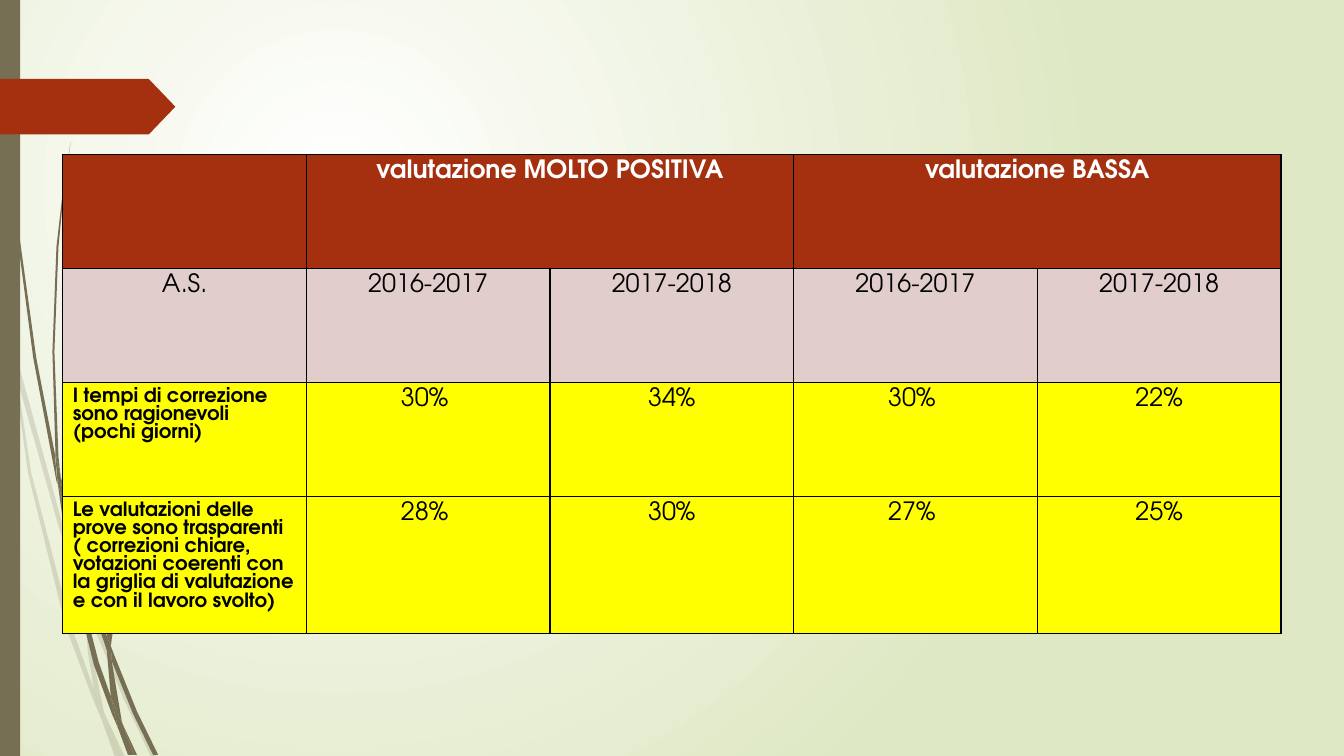
from lxml.etree import SubElement
from pptx import Presentation
from pptx.dml.color import RGBColor
from pptx.enum.shapes import MSO_SHAPE
from pptx.enum.text import PP_ALIGN
from pptx.oxml import parse_xml
from pptx.oxml.ns import nsdecls, qn
from pptx.util import Cm, Pt

WHITE = RGBColor(0xFF, 0xFF, 0xFF)
BLACK = RGBColor(0x00, 0x00, 0x00)
PALE_GREEN = RGBColor(0xDF, 0xE8, 0xC4)
OLIVE = RGBColor(0x76, 0x6F, 0x54)
RUST = RGBColor(0xA5, 0x30, 0x10)
ROSE = RGBColor(0xE1, 0xCD, 0xCC)
YELLOW = RGBColor(0xFF, 0xFF, 0x00)

WISP_UNIT = Cm(0.0254)

PALE_WISPS = [
    [(11, 350), (9, 322), (0, 282), (0, 299), (10, 344)],
    [(17, 376), (58, 522), (84, 599), (85, 586), (62, 520), (14, 345)],
    [(88, 610), (123, 694), (150, 751), (155, 751), (127, 692), (92, 607), (88, 596)],
    [(119, 751), (124, 751), (105, 711)],
    [(11, 350), (28, 470), (65, 621), (92, 693), (101, 714),
     (99, 707), (93, 683), (70, 619), (31, 469), (17, 376)],
    [(84, 599), (87, 646), (93, 683), (96, 692), (105, 711),
     (103, 706), (91, 646), (88, 610), (88, 608)],
    [(88, 596), (88, 584), (110, 462), (160, 349), (229, 245), (268, 198), (290, 175), (312, 154),
     (312, 153), (289, 175), (268, 197), (228, 244), (158, 348), (107, 461), (85, 584), (85, 586)],
    [(101, 714), (114, 751), (119, 751)],
    [(88, 608), (88, 596), (85, 586), (84, 599)],
    [(93, 683), (99, 707), (101, 714), (119, 751), (105, 711), (96, 692)],
]
DARK_WISPS = [
    [(3, 0), (4, 48), (7, 110), (17, 233), (33, 355), (56, 477), (57, 481),
     (55, 457), (55, 453), (36, 355), (19, 232), (8, 109), (5, 48), (4, 0)],
    [(60, 472), (64, 505), (88, 592), (106, 645), (106, 633), (106, 631), (93, 590)],
    [(110, 641), (111, 656), (132, 708), (152, 749), (157, 749), (136, 706), (113, 649)],
    [(57, 477), (68, 557), (93, 659), (111, 708), (117, 722),
     (116, 717), (110, 691), (98, 657), (72, 556), (64, 505)],
    [(70, 141), (62, 193), (56, 245), (52, 349), (55, 449), (60, 472),
     (58, 453), (54, 349), (58, 245), (63, 193)],
    [(122, 719), (133, 749), (136, 749)],
    [(55, 449), (55, 453), (57, 477), (64, 505), (60, 472)],
    [(110, 641), (111, 633), (125, 552), (158, 476), (205, 406), (231, 374), (245, 359), (261, 344),
     (260, 344), (245, 358), (231, 373), (204, 405), (156, 474), (122, 551), (106, 631)],
    [(117, 722), (127, 749), (131, 749)],
    [(106, 645), (110, 691), (116, 706), (122, 719), (121, 716), (111, 656), (109, 651)],
    [(106, 631), (106, 645), (109, 651), (111, 656), (110, 641)],
    [(110, 691), (116, 717), (117, 722), (130, 749), (133, 749), (122, 719), (116, 706)],
]

YEARS = ["2016-2017", "2017-2018"]
ROWS = [
    (RUST, ["", "valutazione MOLTO POSITIVA", "", "valutazione BASSA", ""]),
    (ROSE, ["A.S."] + YEARS * 2),
    (YELLOW, ["I tempi di correzione sono ragionevoli (pochi giorni)",
              "30% ", "34%", "30% ", "22%"]),
    (YELLOW, ["Le valutazioni delle prove sono trasparenti ( correzioni chiare, "
              "votazioni coerenti con la griglia di valutazione e con il lavoro svolto)",
              "28% ", "30%", "27% ", "25%"]),
]
ROW_HEIGHTS = [2.87, 2.87, 2.87, 3.45]
COLUMN_WIDTH = 6.14


class SlideBuilder:
    font_name = "TeX Gyre Adventor"
    line_pitch = 0.93

    def __init__(self, slide):
        self.slide = slide

    def background(self, centre_color, edge_color):
        fill = self.slide.background.fill
        fill.gradient()
        for stop, position, color in zip(fill.gradient_stops, (0, 1), (centre_color, edge_color)):
            stop.position = position
            stop.color.rgb = color
        gradient = next(self.slide.element.iter(qn("a:gradFill")))
        gradient.replace(gradient.find(qn("a:lin")), parse_xml(
            f'<a:path {nsdecls("a")} path="circle">'
            '<a:fillToRect l="50000" t="50000" r="100000" b="100000"/></a:path>'))

    def paint(self, shape, color):
        shape.shadow.inherit = False
        shape.fill.solid()
        shape.fill.fore_color.rgb = color
        shape.line.fill.background()

    def block(self, kind, left, top, width, height, color):
        shape = self.slide.shapes.add_shape(kind, Cm(left), Cm(top), Cm(width), Cm(height))
        self.paint(shape, color)
        return shape

    def wisp(self, outline, color, opacity=100):
        builder = self.slide.shapes.build_freeform(*outline[0], scale=WISP_UNIT)
        builder.add_line_segments(outline[1:], close=True)
        shape = builder.convert_to_shape()
        self.paint(shape, color)
        if opacity < 100:
            color_element = next(shape.element.spPr.iter(qn("a:srgbClr")))
            SubElement(color_element, qn("a:alpha")).set("val", str(opacity * 1000))

    def cell_borders(self, cell, color):
        properties = cell._tc.get_or_add_tcPr()
        for position, side in enumerate(("lnL", "lnR", "lnT", "lnB")):
            properties.insert(position, parse_xml(
                f'<a:{side} {nsdecls("a")} w="12700"><a:solidFill>'
                f'<a:srgbClr val="{color}"/></a:solidFill></a:{side}>'))

    def cell(self, cell, text, fill_color, text_color, size, bold, alignment):
        cell.fill.solid()
        cell.fill.fore_color.rgb = fill_color
        self.cell_borders(cell, BLACK)
        paragraph = cell.text_frame.paragraphs[0]
        paragraph.text = text
        paragraph.alignment = alignment
        paragraph.line_spacing = Pt(size * self.line_pitch)
        font = paragraph.font
        font.name = self.font_name
        font.size = Pt(size)
        font.bold = bold
        font.color.rgb = text_color

    def table(self, left, top, rows, row_heights, column_width):
        column_count = len(rows[0][1])
        table = self.slide.shapes.add_table(
            len(rows), column_count, Cm(left), Cm(top),
            Cm(column_width * column_count), Cm(sum(row_heights))).table
        for column in table.columns:
            column.width = Cm(column_width)
        for row_index, (fill_color, texts) in enumerate(rows):
            table.rows[row_index].height = Cm(row_heights[row_index])
            header = row_index == 0
            for column_index, text in enumerate(texts):
                question = row_index > 1 and column_index == 0
                self.cell(table.cell(row_index, column_index), text, fill_color,
                          WHITE if header else BLACK, 14 if question else 18,
                          header or question, PP_ALIGN.LEFT if question else PP_ALIGN.CENTER)
        for first in range(1, column_count, 2):
            table.cell(0, first).merge(table.cell(0, first + 1))


def main():
    presentation = Presentation()
    presentation.slide_width = Cm(33.87)
    presentation.slide_height = Cm(19.05)
    builder = SlideBuilder(presentation.slides.add_slide(presentation.slide_layouts[6]))
    builder.background(WHITE, PALE_GREEN)
    for outline in PALE_WISPS:
        builder.wisp(outline, OLIVE, opacity=20)
    for outline in DARK_WISPS:
        builder.wisp(outline, OLIVE)
    builder.block(MSO_SHAPE.RECTANGLE, 0, 0, 0.51, 19.05, OLIVE)
    arrow = builder.block(MSO_SHAPE.PENTAGON, 0, 1.99, 4.42, 1.4, RUST)
    arrow.adjustments[0] = 0.48
    builder.table(1.58, 3.9, ROWS, ROW_HEIGHTS, COLUMN_WIDTH)
    presentation.save("out.pptx")


if __name__ == "__main__":
    main()
